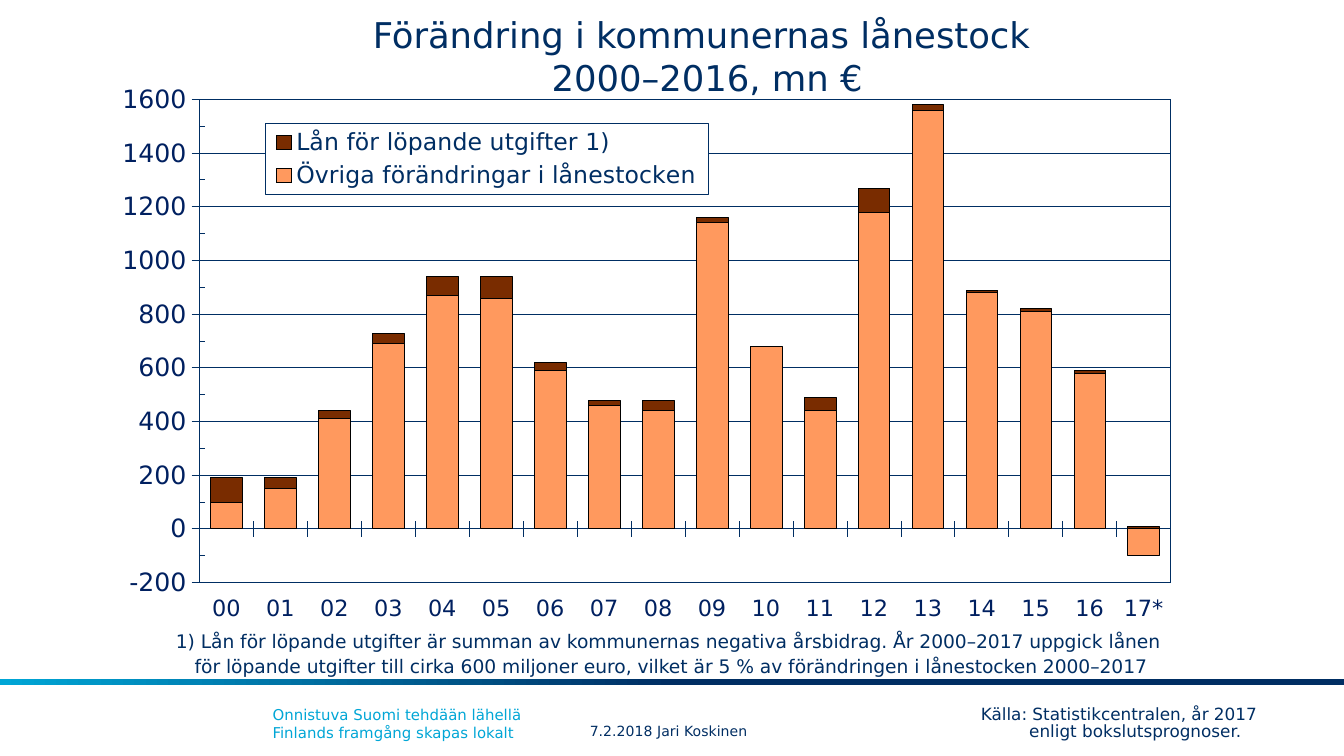
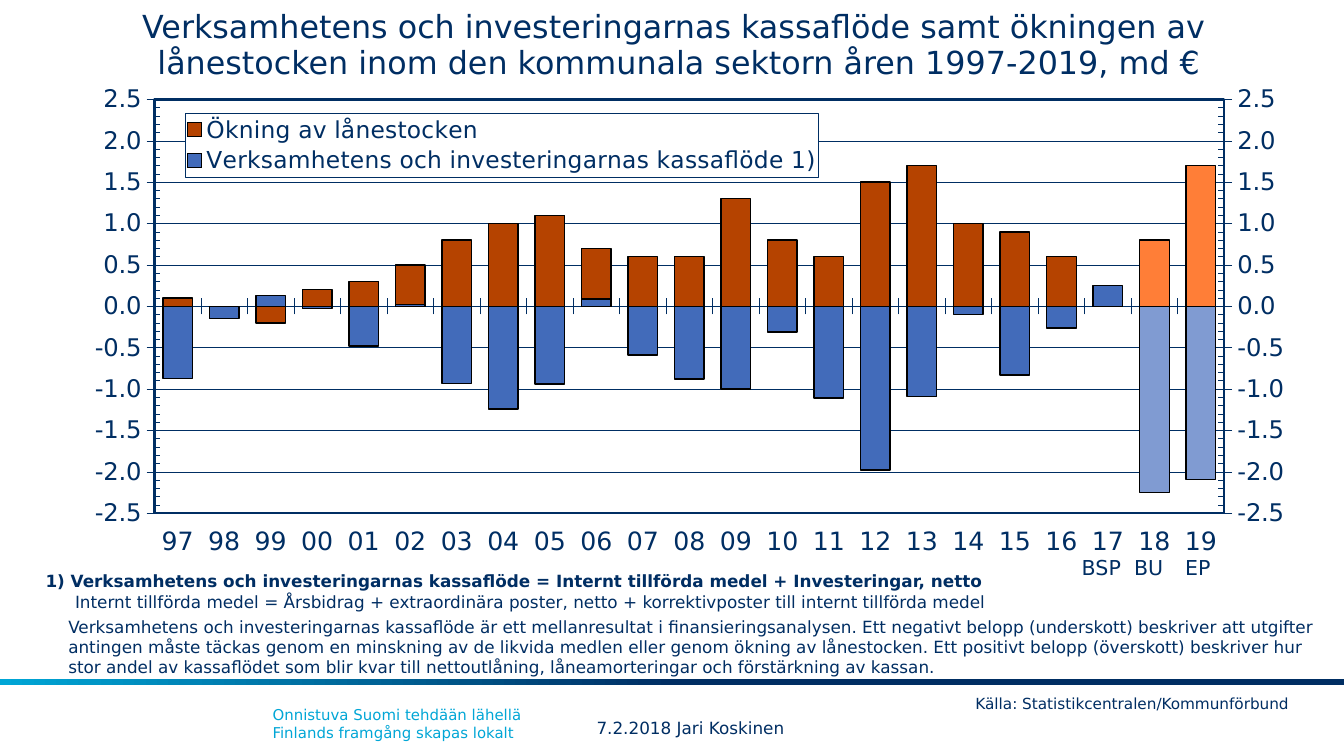
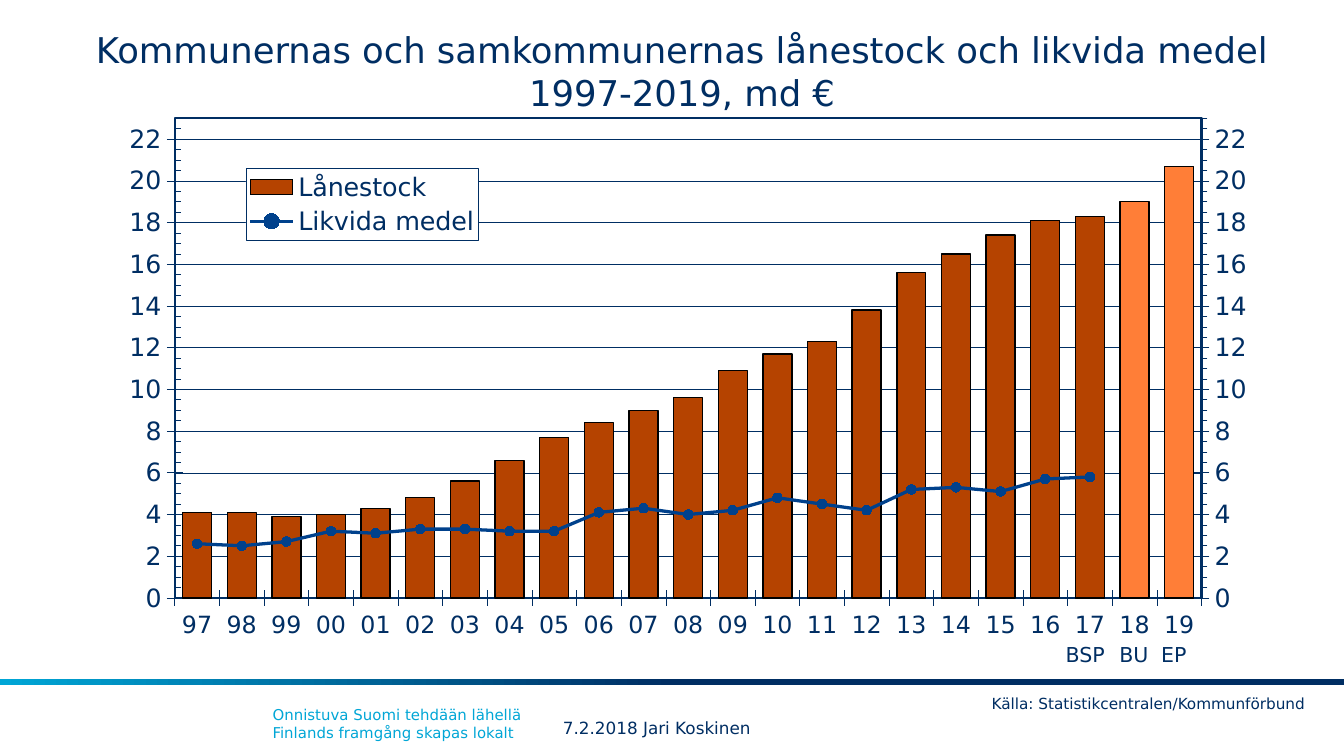
import copy
from dataclasses import dataclass

import pptx
import pptx.chart.data
import pptx.dml.color
import pptx.enum.chart
import pptx.enum.dml
import pptx.enum.shapes
import pptx.enum.text
import pptx.oxml
import pptx.oxml.ns
import pptx.util
from lxml import etree

Inches = pptx.util.Inches
Pt = pptx.util.Pt
qn = pptx.oxml.ns.qn
Tick = pptx.enum.chart.XL_TICK_MARK


@dataclass(frozen=True)
class Theme:
    navy: str = "002E63"
    deep_navy: str = "002060"
    cyan: str = "00A6D6"
    black: str = "000000"
    peach: str = "FF995E"
    brown: str = "792C00"
    rust: str = "B54300"
    orange: str = "FF7E37"
    blue: str = "426BBA"
    pale_blue: str = "809BD2"
    line_blue: str = "00418C"
    font: str = "DejaVu Sans"
    chart_font: str = "Times New Roman"
    title: float = 19
    long_title: float = 17
    tag: float = 11
    footnote: float = 10
    note: float = 9
    source: float = 8.2
    slogan: float = 8
    byline: float = 7.5


theme = Theme()
rgb = pptx.dml.color.RGBColor.from_string


def add_text(slide, box, *lines, size, color=theme.navy, align=None, spacing=None, gap=0,
             indents=(), bold_first=False, inset=(0.1, 0.05, 0.1, 0.05), wrap=True, bottom=False):
    frame = slide.shapes.add_textbox(*map(Inches, box)).text_frame
    frame.word_wrap = wrap
    if not wrap:
        frame.auto_size = pptx.enum.text.MSO_AUTO_SIZE.SHAPE_TO_FIT_TEXT
    if bottom:
        frame.vertical_anchor = pptx.enum.text.MSO_ANCHOR.BOTTOM
    frame.margin_left, frame.margin_top, frame.margin_right, frame.margin_bottom = map(Inches, inset)
    for number, line in enumerate(lines):
        paragraph = frame.add_paragraph() if number else frame.paragraphs[0]
        paragraph.text = line
        paragraph.alignment = align
        paragraph.line_spacing = spacing
        if number and gap:
            paragraph.space_before = Pt(gap)
        if indents:
            paragraph._p.get_or_add_pPr().set("marL", str(Inches(indents[number])))
        for line_break in paragraph._p.findall(qn("a:br")):
            etree.SubElement(line_break, qn("a:rPr"), sz=str(int(size * 100)))
        for run in paragraph.runs:
            run.font.name = theme.font
            run.font.size = Pt(size)
            run.font.bold = bold_first and number == 0
            run.font.color.rgb = rgb(color)


years = [f"{year % 100:02d}" for year in range(1997, 2020)]
center = pptx.enum.text.PP_ALIGN.CENTER
stacked = pptx.enum.chart.XL_CHART_TYPE.COLUMN_STACKED
clustered = pptx.enum.chart.XL_CHART_TYPE.COLUMN_CLUSTERED

graphs = [
    dict(
        kind=stacked, box=(0.91, 0.61, 8.26, 4.02), plot=(1.47, 0.74, 7.24, 3.6),
        legend=(1.96, 0.92, 3.3, 0.53), legend_size=12.6, base_size=22.3,
        cats=[f"{year:02d}" for year in range(17)] + ["17*"], cat_size=12, low=True,
        val_size=13.5, axis_color=theme.deep_navy, number_format="0",
        scale=(-200, 1600, 200, 100), gap=70, pair=None, border=0.75, outline=0.25,
        series=[
            ("Övriga förändringar i lånestocken", theme.peach, None,
             [100, 150, 410, 690, 870, 860, 590, 460, 440, 1140, 680, 440, 1180, 1560, 880, 810, 580, -100]),
            ("Lån för löpande utgifter 1)", theme.brown, None,
             [90, 40, 30, 40, 70, 80, 30, 20, 40, 20, 0, 50, 90, 20, 10, 10, 10, 10]),
        ],
    ),
    dict(
        kind=clustered, box=(0.61, 0.62, 9.04, 3.67), plot=(1.15, 0.74, 7.96, 3.08),
        legend=(1.38, 0.84, 4.71, 0.48), legend_size=12.5, base_size=21.9,
        cats=years, cat_size=13.5, low=True,
        val_size=13, axis_color=theme.navy, number_format="0.0",
        scale=(-2.5, 2.5, 0.5, 0.1), gap=57, pair="bar", right_minor="in", border=1.2, outline=0.75,
        series=[
            ("Ökning av lånestocken", theme.rust, theme.orange,
             [0.1, 0, -0.2, 0.2, 0.3, 0.5, 0.8, 1, 1.1, 0.7, 0.6, 0.6, 1.3, 0.8, 0.6, 1.5, 1.7, 1, 0.9,
              0.6, 0.2, 0.8, 1.7]),
            ("Verksamhetens och investeringarnas kassaflöde 1)", theme.blue, theme.pale_blue,
             [-0.87, -0.15, 0.13, -0.03, -0.48, 0.02, -0.93, -1.24, -0.94, 0.09, -0.59, -0.88, -1, -0.31,
              -1.11, -1.98, -1.09, -0.1, -0.83, -0.26, 0.25, -2.25, -2.09]),
        ],
    ),
    dict(
        kind=clustered, box=(0.79, 0.79, 8.62, 4.15), plot=(1.3, 0.88, 7.64, 3.57),
        legend=(1.83, 1.25, 1.73, 0.54), legend_size=13.6, base_size=22.3,
        cats=years, cat_size=12.7, low=False,
        val_size=13.5, axis_color=theme.navy, number_format="0",
        scale=(0, 23, 2, 0.5), gap=54, pair="line", right_minor="out", border=1.2, outline=0.75,
        series=[
            ("Lånestock", theme.rust, theme.orange,
             [4.1, 4.1, 3.9, 4, 4.3, 4.8, 5.6, 6.6, 7.7, 8.4, 9, 9.6, 10.9, 11.7, 12.3, 13.8, 15.6, 16.5,
              17.4, 18.1, 18.3, 19, 20.7]),
            ("Likvida medel", theme.line_blue, None,
             [2.6, 2.5, 2.7, 3.2, 3.1, 3.3, 3.3, 3.2, 3.2, 4.1, 4.3, 4, 4.2, 4.8, 4.5, 4.2, 5.2, 5.3, 5.1,
              5.7, 5.8, None, None]),
        ],
    ),
]

chart_ns = pptx.oxml.ns.nsdecls("c", "a")
pair_parts = {
    "bar": ('<c:barDir val="col"/><c:grouping val="clustered"/>', '<c:gapWidth val="57"/>'),
    "line": ('<c:grouping val="standard"/>', '<c:marker val="1"/>'),
}
right_ids = {"c:catAx": "5001", "c:valAx": "5002"}

deck = pptx.Presentation()
deck.slide_width = Inches(10)
deck.slide_height = Inches(10) * 9 // 16
slides = []

for graph in graphs:
    slide = deck.slides.add_slide(deck.slide_layouts[6])
    slides.append(slide)
    band = slide.shapes.add_shape(pptx.enum.shapes.MSO_SHAPE.RECTANGLE,
                                  Inches(0), Inches(5.05), Inches(10), Inches(0.05))
    band.shadow.inherit = False
    band.line.fill.background()
    band.fill.gradient()
    band.fill.gradient_angle = 180
    for stop, position, color in zip(band.fill.gradient_stops, (0.5, 1), (theme.navy, theme.cyan)):
        stop.position = position
        stop.color.rgb = rgb(color)
    add_text(slide, (1.93, 5.2, 6.54, 0.37),
             "Onnistuva Suomi tehdään lähellä\nFinlands framgång skapas lokalt",
             size=theme.slogan, color=theme.cyan)

    figures = pptx.chart.data.CategoryChartData()
    figures.categories = graph["cats"]
    for name, color, forecast, values in graph["series"]:
        figures.add_series(name, values)
    chart = slide.shapes.add_chart(graph["kind"], *map(Inches, graph["box"]), figures).chart
    chart.has_title = False
    chart.font.name = theme.chart_font
    chart.font.size = Pt(graph["base_size"])
    chart.font.bold = True
    chart.font.color.rgb = rgb(theme.navy)
    chart.has_legend = True
    chart.legend.position = pptx.enum.chart.XL_LEGEND_POSITION.RIGHT
    chart.legend.include_in_layout = False
    chart.plots[0].gap_width = graph["gap"]
    if graph["kind"] == stacked:
        chart.plots[0].overlap = 100

    years_axis, amounts = chart.category_axis, chart.value_axis
    for axis, size in ((years_axis, graph["cat_size"]), (amounts, graph["val_size"])):
        axis.major_tick_mark = Tick.CROSS
        axis.format.line.color.rgb = rgb(theme.navy)
        axis.format.line.width = Pt(0.3)
        axis.tick_labels.font.name = theme.font
        axis.tick_labels.font.size = Pt(size)
        axis.tick_labels.font.bold = False
        axis.tick_labels.font.color.rgb = rgb(graph["axis_color"])
    if graph["low"]:
        years_axis.tick_label_position = pptx.enum.chart.XL_TICK_LABEL_POSITION.LOW
    amounts.minor_tick_mark = Tick.INSIDE
    amounts.minimum_scale, amounts.maximum_scale, amounts.major_unit, amounts.minor_unit = graph["scale"]
    amounts.tick_labels.number_format = graph["number_format"]
    amounts.tick_labels.number_format_is_linked = False
    grid = amounts.major_gridlines.format.line
    grid.color.rgb = rgb(theme.navy)
    grid.width = Pt(0.25)
    grid.dash_style = pptx.enum.dml.MSO_LINE.ROUND_DOT

    plot_area = chart.element.find(qn("c:chart")).find(qn("c:plotArea"))
    if graph["pair"]:
        head, tail = pair_parts[graph["pair"]]
        columns = plot_area.find(qn("c:barChart"))
        partner = pptx.oxml.parse_xml(
            f'<c:{graph["pair"]}Chart {chart_ns}>{head}<c:varyColors val="0"/>{tail}'
            f'<c:axId val="5001"/><c:axId val="5002"/></c:{graph["pair"]}Chart>')
        moved = columns.findall(qn("c:ser"))[1]
        if graph["pair"] == "line":
            for flag in moved.findall(qn("c:invertIfNegative")):
                moved.remove(flag)
        partner.find(qn("c:varyColors")).addnext(moved)
        columns.addnext(partner)
        last_axis = plot_area.find(qn("c:valAx"))
        for tag, other in (("c:catAx", "c:valAx"), ("c:valAx", "c:catAx")):
            right = copy.deepcopy(plot_area.find(qn(tag)))
            right.find(qn("c:axId")).set("val", right_ids[tag])
            right.find(qn("c:crossAx")).set("val", right_ids[other])
            if tag == "c:catAx":
                right.find(qn("c:delete")).set("val", "1")
            else:
                right.remove(right.find(qn("c:majorGridlines")))
                right.find(qn("c:axPos")).set("val", "r")
                right.find(qn("c:crosses")).set("val", "max")
                right.find(qn("c:minorTickMark")).set("val", graph["right_minor"])
            last_axis.addnext(right)

    drawn = [(plot, series) for plot in chart.plots for series in plot.series]
    for (plot, series), (name, color, forecast, values) in zip(drawn, graph["series"]):
        plot.vary_by_categories = False
        if graph["pair"] == "line" and name == "Likvida medel":
            series.smooth = False
            series.format.line.color.rgb = rgb(color)
            series.format.line.width = Pt(1.75)
            series.marker.style = pptx.enum.chart.XL_MARKER_STYLE.CIRCLE
            series.marker.size = 5
            series.marker.format.fill.solid()
            series.marker.format.fill.fore_color.rgb = rgb(color)
            series.marker.format.line.color.rgb = rgb(color)
            continue
        paints = [(series.format, color)]
        if forecast:
            paints += [(series.points[index].format, forecast) for index in (21, 22)]
        for look, paint in paints:
            look.fill.solid()
            look.fill.fore_color.rgb = rgb(paint)
            look.line.color.rgb = rgb(theme.black)
            look.line.width = Pt(graph["outline"])

    left, top, width, height = graph["box"]
    legend_box = chart.element.find(qn("c:chart")).find(qn("c:legend"))
    for part, place, border, fill in (
        (plot_area, graph["plot"], graph["border"], "<a:noFill/>"),
        (legend_box, graph["legend"], 0.25, '<a:solidFill><a:srgbClr val="FFFFFF"/></a:solidFill>'),
    ):
        for automatic in part.findall(qn("c:layout")):
            part.remove(automatic)
        layout = pptx.oxml.parse_xml(f"<c:layout {chart_ns}><c:manualLayout/></c:layout>")
        manual = layout[0]
        if part is plot_area:
            etree.SubElement(manual, qn("c:layoutTarget"), val="inner")
        for mode in ("xMode", "yMode"):
            etree.SubElement(manual, qn("c:" + mode), val="edge")
        shares = ((place[0] - left) / width, (place[1] - top) / height, place[2] / width, place[3] / height)
        for side, share in zip("xywh", shares):
            etree.SubElement(manual, qn("c:" + side), val=f"{share:.4f}")
        part.insert(len(part.findall(qn("c:legendPos"))), layout)
        outline = pptx.oxml.parse_xml(
            f'<c:spPr {chart_ns}>{fill}<a:ln w="{Pt(border)}"><a:solidFill>'
            f'<a:srgbClr val="{theme.navy}"/></a:solidFill></a:ln></c:spPr>')
        part.append(outline)
    chart.legend.font.name = theme.font
    chart.legend.font.size = Pt(graph["legend_size"])
    chart.legend.font.bold = False
    chart.legend.font.color.rgb = rgb(theme.navy)

change, cash_flow, debt = slides

for slide, box, size in (
    (change, (4.29, 5.33, 1.97, 0.24), theme.byline),
    (cash_flow, (4.34, 5.29, 1.72, 0.22), theme.note),
    (debt, (4.09, 5.29, 1.96, 0.22), theme.note),
):
    add_text(slide, box, "7.2.2018 Jari Koskinen", size=size)

for slide, tag_top, tag_lefts, source_left in (
    (cash_flow, 4.08, (8.72, 7.95, 8.34), 7.16),
    (debt, 4.73, (8.54, 7.83, 8.23), 7.28),
):
    for tag, tag_left, tag_width in zip(("EP", "BSP", "BU"), tag_lefts, (0.39, 0.51, 0.42)):
        add_text(slide, (tag_left, tag_top, tag_width, 0.29), tag, size=theme.tag, wrap=False)
    add_text(slide, (source_left, 5.12, 2.76, 0.24), "Källa: Statistikcentralen/Kommunförbund",
             size=theme.source)

add_text(change, (7.2, 5.21, 2.6, 0.36), "Källa: Statistikcentralen, år 2017", "enligt bokslutsprognoser.",
         size=theme.note, spacing=0.85, indents=(0, 0.36))
add_text(change, (1.47, 0.04, 7.5, 0.74), "Förändring i kommunernas lånestock\n 2000–2016, mn €",
         size=theme.title, align=center, inset=(0, 0.05, 0, 0.05), bottom=True)
add_text(change, (1.13, 4.52, 7.84, 0.57),
         "1) Lån för löpande utgifter är summan av kommunernas negativa årsbidrag. "
         "År 2000–2017 uppgick lånen",
         "för löpande utgifter till cirka 600 miljoner euro, vilket är 5 % av förändringen i "
         "lånestocken 2000–2017",
         size=theme.footnote, indents=(0.08, 0.22), gap=1, inset=(0.1, 0.17, 0.1, 0.05))

add_text(cash_flow, (0.27, 0.07, 9.57, 0.54),
         "Verksamhetens och investeringarnas kassaflöde samt ökningen av ",
         "lånestocken inom den kommunala sektorn åren 1997-2019, md €",
         size=theme.long_title, align=center, spacing=0.95, inset=(0, 0, 0, 0))
add_text(cash_flow, (0.41, 4.54, 9.53, 0.56),
         "Verksamhetens och investeringarnas kassaflöde är ett mellanresultat i finansieringsanalysen. "
         "Ett negativt belopp (underskott) beskriver att utgifter antingen måste täckas genom en minskning "
         "av de likvida medlen eller genom ökning av lånestocken. Ett positivt belopp (överskott) beskriver "
         "hur stor andel av kassaflödet som blir kvar till nettoutlåning, låneamorteringar och förstärkning "
         "av kassan.", size=theme.note)
add_text(cash_flow, (0.2, 4.2, 7.85, 0.4),
         "1) Verksamhetens och investeringarnas kassaflöde = Internt tillförda medel + Investeringar, netto",
         "Internt tillförda medel = Årsbidrag + extraordinära poster, netto + korrektivposter till internt "
         "tillförda medel", size=theme.note, indents=(0.04, 0.26), bold_first=True)

add_text(debt, (0.35, 0.21, 9.45, 0.64),
         "Kommunernas och samkommunernas lånestock och likvida medel 1997-2019, md €",
         size=theme.title, align=center, inset=(0, 0, 0, 0))

deck.save("out.pptx")
